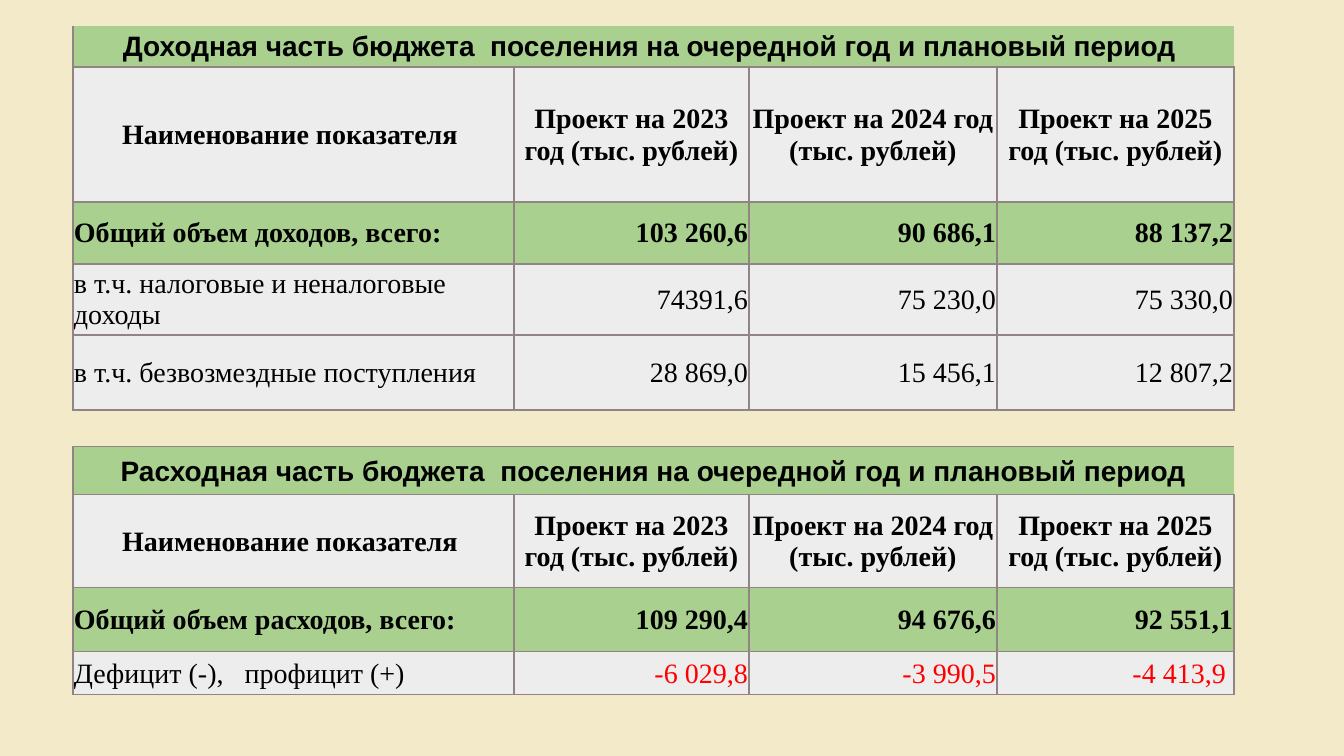
import lxml.etree
import pptx
import pptx.dml.color
import pptx.enum.text
import pptx.oxml.ns
import pptx.util

PX = 12700 * 72 / 100.8
THEME = {
    "background": "F2EAC8",
    "accent": "A9D08E",
    "plain": "EEEDED",
    "border": "918485",
    "text": "000000",
    "deficit": "FF0000",
    "title_font": "Arial",
    "body_font": "Times New Roman",
    "size": 20,
}
NO_STYLE = "{2D5ABB26-0587-4C30-8999-92F81FD0307C}"
ALIGN = pptx.enum.text.PP_ALIGN


def px(length):
    return pptx.util.Emu(round(length * PX))


def rgb(name):
    return pptx.dml.color.RGBColor.from_string(THEME[name])


headings = [
    "Наименование показателя ",
    "Проект на 2023 год (тыс. рублей)",
    "Проект на 2024 год\n(тыс. рублей)",
    "Проект на 2025 год (тыс. рублей)",
]
budget_rows = [
    ("title", 41, ["Доходная часть бюджета  поселения на очередной год и плановый период ", "", "", ""]),
    ("heading", 135, headings),
    ("total", 62, ["Общий объем доходов, всего:", "103 260,6", "90 686,1", "88 137,2"]),
    ("item", 71, ["в т.ч. налоговые и неналоговые доходы", "74391,6", "75 230,0", "75 330,0"]),
    ("item", 75, ["в т.ч. безвозмездные поступления", "28 869,0", "15 456,1", "12 807,2"]),
    ("gap", 37, ["", "", "", ""]),
    ("title", 48, ["Расходная часть бюджета  поселения на очередной год и плановый период", "", "", ""]),
    ("heading", 93, headings),
    ("total", 64, ["Общий объем расходов, всего:", "109 290,4", "94 676,6", "92 551,1"]),
    ("deficit", 43, ["Дефицит (-),   профицит (+)", "-6 029,8", "-3 990,5", "-4 413,9 "]),
]
column_widths = [441, 235, 248, 237]

deck = pptx.Presentation()
deck.slide_width, deck.slide_height = px(1344), px(756)
slide = deck.slides.add_slide(deck.slide_layouts[6])
slide.background.fill.solid()
slide.background.fill.fore_color.rgb = rgb("background")

budget = slide.shapes.add_table(
    len(budget_rows), len(column_widths), px(73), px(26),
    px(sum(column_widths)), px(sum(height for _, height, _ in budget_rows)),
).table
budget.first_row = budget.horz_banding = False
budget._tbl.tblPr.find(pptx.oxml.ns.qn("a:tableStyleId")).text = NO_STYLE
for column, width in zip(budget.columns, column_widths):
    column.width = px(width)

for row_index, (role, height, texts) in enumerate(budget_rows):
    budget.rows[row_index].height = px(height)
    if role == "title":
        budget.cell(row_index, 0).merge(budget.cell(row_index, 3))
    for column_index, text in enumerate(texts):
        cell = budget.cell(row_index, column_index)
        cell.margin_left = cell.margin_right = cell.margin_top = px(1)
        cell.margin_bottom = 0
        cell.vertical_anchor = pptx.enum.text.MSO_ANCHOR.MIDDLE

        sides = {"title": "LB" if column_index == 0 else "B", "gap": "T"}.get(role, "LRTB")
        for side in sides:
            border = lxml.etree.SubElement(
                cell._tc.get_or_add_tcPr(), pptx.oxml.ns.qn("a:ln" + side), w="12700")
            paint = lxml.etree.SubElement(border, pptx.oxml.ns.qn("a:solidFill"))
            lxml.etree.SubElement(paint, pptx.oxml.ns.qn("a:srgbClr"), val=THEME["border"])

        if role == "gap":
            cell.fill.background()
            continue
        cell.fill.solid()
        cell.fill.fore_color.rgb = rgb("accent" if role in ("title", "total") else "plain")
        if not text:
            continue
        cell.text = text
        for paragraph in cell.text_frame.paragraphs:
            if role in ("title", "heading"):
                paragraph.alignment = ALIGN.CENTER
            else:
                paragraph.alignment = ALIGN.RIGHT if column_index else ALIGN.LEFT
            paragraph.font.name = THEME["title_font" if role == "title" else "body_font"]
            paragraph.font.size = pptx.util.Pt(THEME["size"])
            paragraph.font.bold = role in ("title", "heading", "total")
            paragraph.font.color.rgb = rgb("deficit" if role == "deficit" and column_index else "text")

deck.save("out.pptx")
